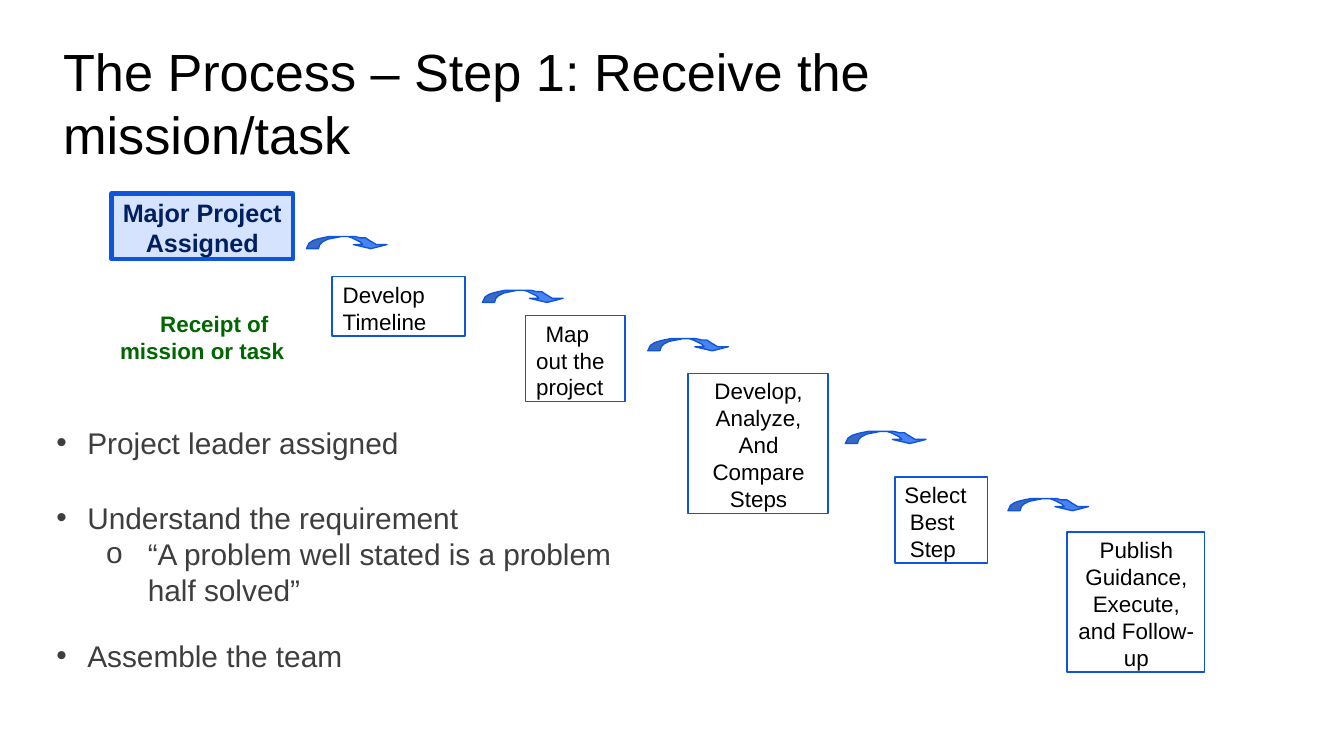
import pptx
import pptx.util
import pptx.dml.color
import pptx.enum.shapes
import pptx.enum.text
import pptx.oxml.ns
from lxml import etree

Inches = pptx.util.Inches
Pt = pptx.util.Pt
RGB = pptx.dml.color.RGBColor
RECT = pptx.enum.shapes.MSO_SHAPE.RECTANGLE
LEFT = pptx.enum.text.PP_ALIGN.LEFT
MID = pptx.enum.text.PP_ALIGN.CENTER

BLACK = RGB(0x00, 0x00, 0x00)
GRAY = RGB(0x3E, 0x3E, 0x3E)
GREEN = RGB(0x00, 0x66, 0x00)
NAVY = RGB(0x00, 0x1F, 0x5F)
BLUE = RGB(0x0F, 0x55, 0xDC)
PALE = RGB(0xD5, 0xE3, 0xFF)
BRIGHT = RGB(0x48, 0x83, 0xF1)
DARK = RGB(0x3A, 0x69, 0xC3)

# Content
TITLE = "The Process – Step 1: Receive the mission/task"
START = "Major Project Assigned"
NOTE = "Receipt of mission or task"

# text, (left, top, width, height), align, margin, first-line indent
STEPS = [
    ("Develop Timeline", (2.47, 2.06, 0.99, 0.44), LEFT, 0.08, 0),
    ("Map out the project", (3.91, 2.35, 0.74, 0.64), LEFT, 0.08, 0.07),
    ("Develop, Analyze, And Compare Steps", (5.12, 2.78, 1.04, 1.04), MID, 0.08, 0),
    ("Select Best Step", (6.66, 3.55, 0.69, 0.64), LEFT, 0.11, -0.04),
    ("Publish Guidance, Execute, and Follow-up", (7.94, 3.96, 1.02, 1.04), MID, 0.08, 0),
]

# text, level, space before
POINTS = [
    ("Project leader assigned", 0, 0),
    ("Understand the requirement", 0, 21),
    ("“A problem well stated is a problem half solved”", 1, 0),
    ("Assemble the team", 0, 16.2),
]
BULLETS = [("•", 0.25, -0.23), ("o", 0.7, -0.31)]

# Curved arrows: left and top of each, then edges measured from there
ARROWS = [(2.28, 1.76), (3.59, 2.16), (4.82, 2.52), (6.29, 3.21), (7.5, 3.71)]
TAIL_IN = [(0.26, 0), (0.21, 0.01), (0.16, 0.02), (0.12, 0.04), (0.1, 0.06), (0.09, 0.09)]
TAIL_OUT = [(0, 0.09), (0.02, 0.05), (0.05, 0.03), (0.08, 0.02), (0.12, 0.01),
            (0.17, 0), (0.22, 0)]
HEAD_OUT = [(0.31, 0), (0.36, 0), (0.4, 0.01), (0.44, 0.01), (0.47, 0.03), (0.52, 0.06)]
TIP = [(0.6, 0.06), (0.48, 0.09), (0.35, 0.06), (0.42, 0.06)]
HEAD_IN = [(0.4, 0.04), (0.38, 0.03), (0.34, 0.01), (0.31, 0), (0.26, 0)]
HEAD = TAIL_OUT[-1:] + HEAD_OUT + TIP + HEAD_IN
TAIL = TAIL_IN + TAIL_OUT
EDGE = TAIL + HEAD_OUT + TIP + HEAD_IN

# Widescreen slide, 16 to 9
prs = pptx.Presentation()
prs.slide_width = Inches(10)
prs.slide_height = Inches(10) * 9 // 16
slide = prs.slides.add_slide(prs.slide_layouts[6])


def frame(shape, sides, top, foot=0):
    tf = shape.text_frame
    tf.word_wrap = True
    tf.vertical_anchor = pptx.enum.text.MSO_ANCHOR.TOP
    tf.margin_left = tf.margin_right = Inches(sides)
    tf.margin_top, tf.margin_bottom = Inches(top), Inches(foot)
    return tf


def write(para, text, size, color, bold=False, align=LEFT,
          left=0, first=0, right=0, mark=None):
    props = para._p.get_or_add_pPr()
    for key, val in (("marL", left), ("marR", right), ("indent", first)):
        props.set(key, str(Inches(val)))
    if mark:
        for tag, key, val in (("a:buSzPct", "val", "100000"),
                              ("a:buFont", "typeface", "Arial"),
                              ("a:buChar", "char", mark)):
            etree.SubElement(props, pptx.oxml.ns.qn(tag)).set(key, val)
    para.text = text
    para.alignment = align
    font = para.font
    font.name, font.size, font.bold = "Arial", Pt(size), bold
    font.color.rgb = color


def label(at, sides=0, top=0.01, foot=0):
    return frame(slide.shapes.add_textbox(*map(Inches, at)), sides, top, foot)


def box(at, weight, fill=None):
    shape = slide.shapes.add_shape(RECT, *map(Inches, at))
    shape.shadow.inherit = False
    paint(shape, fill, weight)
    return frame(shape, 0, 0.03)


def paint(shape, fill, weight):
    if fill is None:
        shape.fill.background()
    else:
        shape.fill.solid()
        shape.fill.fore_color.rgb = fill
    if weight:
        shape.line.color.rgb = BLUE
        shape.line.width = Pt(weight)
    else:
        shape.line.fill.background()


def arrow(x, y):
    group = slide.shapes.add_group_shape()
    for path, fill, weight in ((HEAD, BRIGHT, 0), (TAIL, DARK, 0), (EDGE, None, 0.75)):
        spots = [(Inches(x + dx), Inches(y + dy)) for dx, dy in path]
        pen = group.shapes.build_freeform(*spots[0])
        pen.add_line_segments(spots[1:], close=True)
        shape = pen.convert_to_shape()
        shape.shadow.inherit = False
        paint(shape, fill, weight)


# Title
tf = label((0.4, 0.25, 7.36, 1.02), 0.07, 0.04, 0.04)
write(tf.paragraphs[0], TITLE, 28, BLACK)

# Current step and its note
tf = box((0.83, 1.44, 1.35, 0.49), 2.25, PALE)
write(tf.paragraphs[0], START, 13.5, NAVY, True, MID, 0.08, 0, 0.08)
tf = label((0.83, 2.3, 1.35, 0.41))
write(tf.paragraphs[0], NOTE, 12, GREEN, True, MID, 0.01, 0.18, 0.01)

# Later steps
for text, at, align, left, first in STEPS:
    tf = box(at, 0.75)
    write(tf.paragraphs[0], text, 12, BLACK, False, align, left, first, 0.07)

# Arrows between steps
for x, y in ARROWS:
    arrow(x, y)

# Bullet points
tf = label((0.4, 3.15, 4.25, 1.88))
for i, (text, level, gap) in enumerate(POINTS):
    para = tf.add_paragraph() if i else tf.paragraphs[0]
    mark, left, first = BULLETS[level]
    para.level = level
    write(para, text, 16, GRAY, left=left, first=first, mark=mark)
    if gap:
        para.space_before = Pt(gap)

prs.save("out.pptx")
